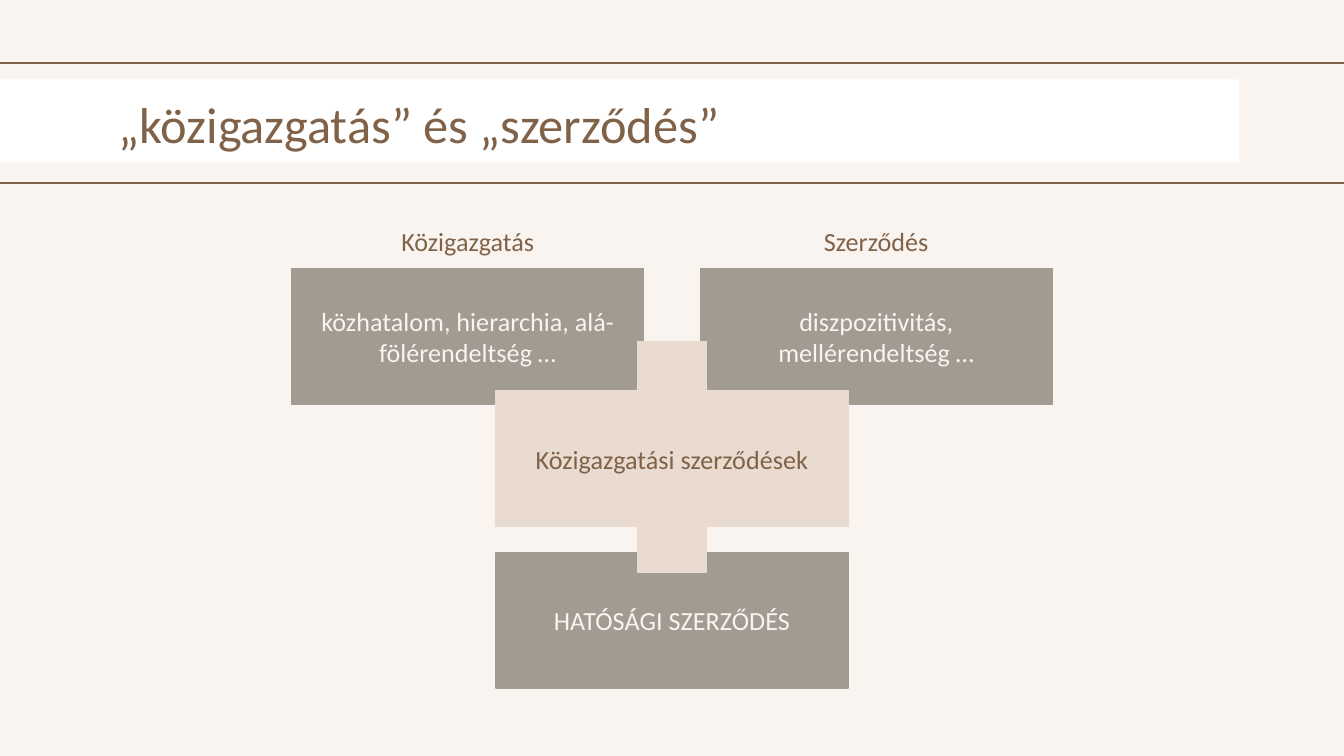
from pptx import Presentation
from pptx.dml.color import RGBColor
from pptx.enum import shapes, text
from pptx.oxml.ns import qn
from pptx.util import Pt
from lxml import etree

BROWN, GREY, BEIGE, CREAM, WHITE = "806248", "A29B92", "E9DBCF", "F9F4F0", "FFFFFF"
WIDTH, HEIGHT = 720, 405


def color(target, value):
    """Give a fill a solid colour, or a line or font its colour."""
    if hasattr(target, "solid"):
        target.solid()
        target = target.fore_color
    else:
        target = target.color
    target.rgb = RGBColor.from_string(value)


def set_text(shape, words, size, value, align, anchor):
    """Write one paragraph in Calibri with even margins."""
    frame = shape.text_frame
    frame.text = words
    frame.word_wrap = True
    frame.auto_size = text.MSO_AUTO_SIZE.NONE
    frame.vertical_anchor = anchor
    frame.margin_left = frame.margin_right = Pt(7.2)
    frame.margin_top = frame.margin_bottom = Pt(7.2)
    paragraph = frame.paragraphs[0]
    paragraph.alignment = align
    font = paragraph.runs[0].font
    font.name = "Calibri"
    font.size = Pt(size)
    font.bold = False
    color(font, value)


presentation = Presentation()
presentation.slide_width, presentation.slide_height = Pt(WIDTH), Pt(HEIGHT)
slide = presentation.slides.add_slide(presentation.slide_layouts[5])
color(slide.background.fill, CREAM)

# Title band, placed behind the title
band = slide.shapes.add_shape(shapes.MSO_SHAPE.RECTANGLE, 0, Pt(42.5), Pt(663.8), Pt(44.6))
band.shadow.inherit = False
color(band.fill, WHITE)
band.line.fill.background()
slide.shapes._spTree.insert(2, band._element)

# Rules above and below the band
for y in (33.8, 98):
    rule = slide.shapes.add_connector(shapes.MSO_CONNECTOR.STRAIGHT, 0, Pt(y), Pt(WIDTH), Pt(y))
    color(rule.line, BROWN)
    rule.line.width = Pt(0.75)
    etree.SubElement(rule._element.spPr, qn("a:effectLst"))

# Title
title = slide.shapes.title
title.left, title.top, title.width, title.height = Pt(56.2), Pt(42.5), Pt(607.6), Pt(44.6)
set_text(title, "„közigazgatás” és „szerződés”", 27, BROWN,
         text.PP_ALIGN.LEFT, text.MSO_ANCHOR.TOP)

# Boxes and the joints between them, all set around vertical axes
BOX = (188.6, 72.7)
JOINT = (36.7, 34.6)
CENTER = WIDTH / 2
LEFT, RIGHT = CENTER - 109.4, CENTER + 109.4
blocks = [
    (LEFT, 144, BOX, GREY, "közhatalom, hierarchia, alá-fölérendeltség …", CREAM),
    (RIGHT, 144, BOX, GREY, "diszpozitivitás, mellérendeltség …", CREAM),
    (CENTER, 209.3, BOX, BEIGE, "Közigazgatási szerződések", BROWN),
    (CENTER, 296, BOX, GREY, "HATÓSÁGI SZERZŐDÉS", CREAM),
    (CENTER, 183, JOINT, BEIGE, None, None),
    (CENTER, 271.9, JOINT, BEIGE, None, None),
]
for axis, top, (width, height), fill, words, ink in blocks:
    block = slide.shapes.add_shape(shapes.MSO_SHAPE.RECTANGLE, Pt(axis - width / 2),
                                   Pt(top), Pt(width), Pt(height))
    block.shadow.inherit = False
    color(block.fill, fill)
    color(block.line, fill)
    block.line.width = Pt(0.75)
    if words:
        set_text(block, words, 14, ink, text.PP_ALIGN.CENTER, text.MSO_ANCHOR.MIDDLE)

# Headings over the two upper boxes
for axis, words in ((LEFT, "Közigazgatás"), (RIGHT, "Szerződés")):
    heading = slide.shapes.add_textbox(Pt(axis - BOX[0] / 2), Pt(116.9), Pt(BOX[0]), Pt(24.5))
    set_text(heading, words, 14, BROWN, text.PP_ALIGN.CENTER, text.MSO_ANCHOR.MIDDLE)

presentation.save("out.pptx")
